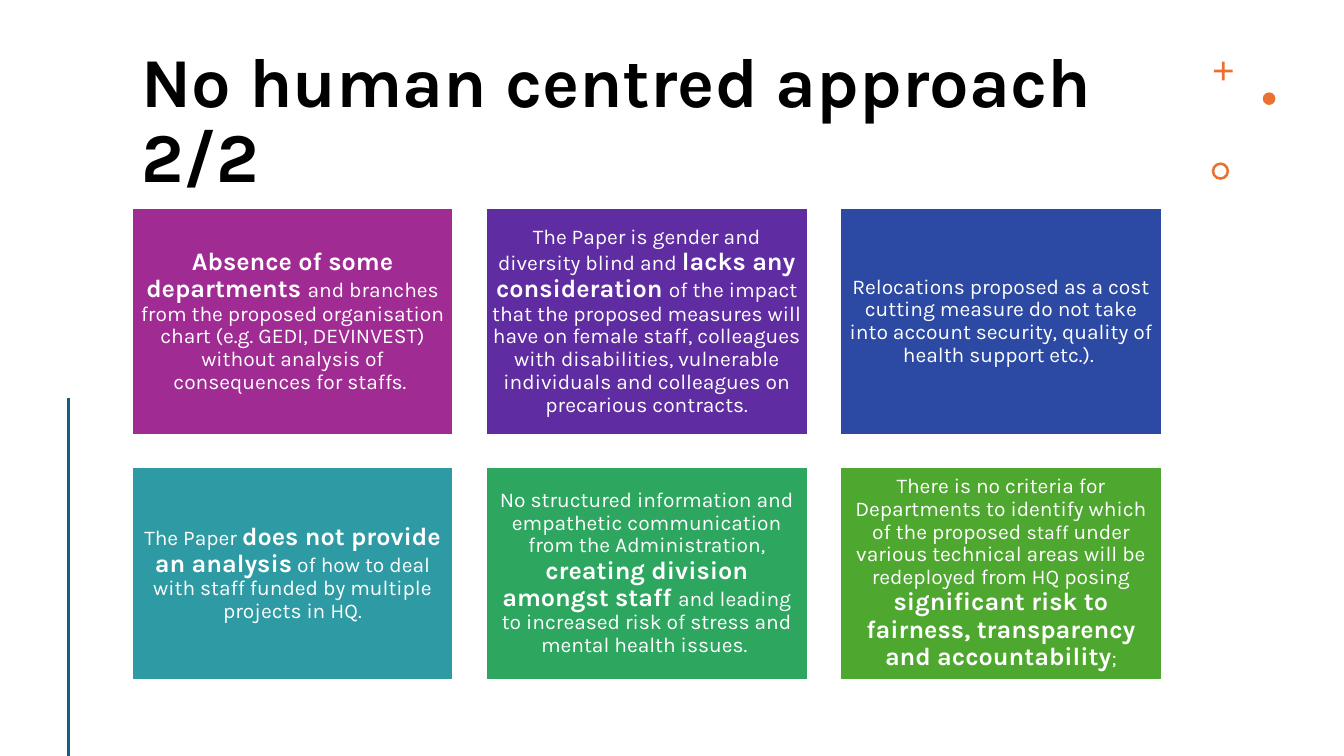
import pptx
import pptx.dml.color
import pptx.enum.shapes
import pptx.enum.text
import pptx.oxml.ns
import pptx.util
import lxml.etree

Pt = pptx.util.Pt
SHAPES = pptx.enum.shapes.MSO_SHAPE
FONT = "Karla"
ORANGE = "E97132"
BLUE = "156082"
WHITE = "FFFFFF"
BODY, STRONG = 15, 18

CARDS = [
    ("A02B93", [
        ("Absence of some departments ", STRONG),
        ("and branches from the proposed organisation chart (e.g. GEDI, DEVINVEST) "
         "without analysis of consequences for staffs. ", BODY)]),
    ("5F2CA1", [
        ("The Paper is gender and diversity blind and ", BODY),
        ("lacks any consideration ", STRONG),
        ("of the impact that the proposed measures will have on female staff, colleagues "
         "with disabilities, vulnerable individuals and colleagues on precarious contracts.", BODY)]),
    ("2C49A3", [
        ("Relocations proposed as a cost cutting measure do not take into account security, "
         "quality of health support etc.). ", BODY)]),
    ("2D9AA4", [
        ("The Paper ", BODY),
        ("does not provide an analysis", STRONG),
        (" of how to deal with staff funded by multiple projects in HQ.", BODY)]),
    ("2DA65F", [
        ("No structured information and empathetic communication from the Administration, ", BODY),
        ("creating division amongst staff ", STRONG),
        ("and leading to increased risk of stress and mental health issues. ", BODY)]),
    ("4EA72E", [
        ("There is no criteria for Departments to identify which of the proposed ", BODY),
        ("staff", 14),
        (" under various technical areas will be redeployed from HQ posing ", BODY),
        ("significant risk to fairness, transparency and accountability", STRONG),
        (";", BODY)]),
]


def color(value):
    """Return the colour for a hex string."""
    return pptx.dml.color.RGBColor.from_string(value)


def add_run(paragraph, text, size, bold, value):
    """Append one formatted run to a paragraph."""
    run = paragraph.add_run()
    run.text = text
    run.font.name = FONT
    run.font.size = Pt(size)
    run.font.bold = bold
    run.font.color.rgb = color(value)


def add_filled_shape(slide, kind, left, top, width, height, fill):
    """Add a flat preset shape without an outline."""
    shape = slide.shapes.add_shape(kind, Pt(left), Pt(top), Pt(width), Pt(height))
    shape.shadow.inherit = False
    shape.fill.solid()
    shape.fill.fore_color.rgb = color(fill)
    shape.line.fill.background()
    return shape


def add_title(slide, left, top, width, height):
    """Add the slide heading."""
    box = slide.shapes.add_textbox(Pt(left), Pt(top), Pt(width), Pt(height))
    box.text_frame.word_wrap = True
    paragraph = box.text_frame.paragraphs[0]
    paragraph.line_spacing = 0.9
    add_run(paragraph, "No human centred approach 2/2", 50, True, "000000")


def add_ornaments(slide, left, top):
    """Add the plus, dot and ring of the top right corner."""
    plus = add_filled_shape(slide, SHAPES.CROSS, left + 1.5, top, 13.5, 13.5, ORANGE)
    plus.adjustments[0] = 0.43
    add_filled_shape(slide, SHAPES.OVAL, left + 36.5, top + 22, 9, 9, ORANGE)
    ring = add_filled_shape(slide, SHAPES.DONUT, left, top + 72, 12.5, 12.5, ORANGE)
    ring.adjustments[0] = 0.15


def add_side_line(slide, left, top, height):
    """Add the vertical accent line."""
    line = slide.shapes.add_connector(
        pptx.enum.shapes.MSO_CONNECTOR.STRAIGHT, Pt(left), Pt(top), Pt(left), Pt(top + height))
    line.line.color.rgb = color(BLUE)
    line.line.width = Pt(2)
    lxml.etree.SubElement(line._element.spPr, pptx.oxml.ns.qn("a:effectLst"))


def add_card(slide, left, top, width, height, fill, runs):
    """Add one coloured card with its centred statement."""
    card = add_filled_shape(slide, SHAPES.RECTANGLE, left, top, width, height, fill)
    card.line.color.rgb = color(WHITE)
    card.line.width = Pt(1.5)
    frame = card.text_frame
    frame.word_wrap = True
    frame.vertical_anchor = pptx.enum.text.MSO_ANCHOR.MIDDLE
    frame.margin_left = frame.margin_right = Pt(4.5)
    frame.margin_top = frame.margin_bottom = Pt(4.5)
    paragraph = frame.paragraphs[0]
    paragraph.alignment = pptx.enum.text.PP_ALIGN.CENTER
    paragraph.line_spacing = 0.9
    for text, size in runs:
        add_run(paragraph, text, size, size == STRONG, WHITE)


def add_card_grid(slide, left, top, width, height):
    """Lay out the cards in two rows of three."""
    columns, gap, row_heights = 3, 23, (162, 152)
    card_width = (width - gap * (columns - 1)) / columns
    row_tops = (top, top + height - row_heights[1])
    for index, (fill, runs) in enumerate(CARDS):
        row, column = divmod(index, columns)
        add_card(slide, left + column * (card_width + gap), row_tops[row],
                 card_width, row_heights[row], fill, runs)


def main():
    """Build and save the presentation."""
    presentation = pptx.Presentation()
    presentation.slide_width = Pt(960)
    presentation.slide_height = Pt(540)
    slide = presentation.slides.add_slide(presentation.slide_layouts[6])
    add_title(slide, 94, 30, 736, 94)
    add_ornaments(slide, 865.5, 44)
    add_side_line(slide, 49, 284, 256)
    add_card_grid(slide, 94, 148.5, 736, 337)
    presentation.save("out.pptx")


if __name__ == "__main__":
    main()
